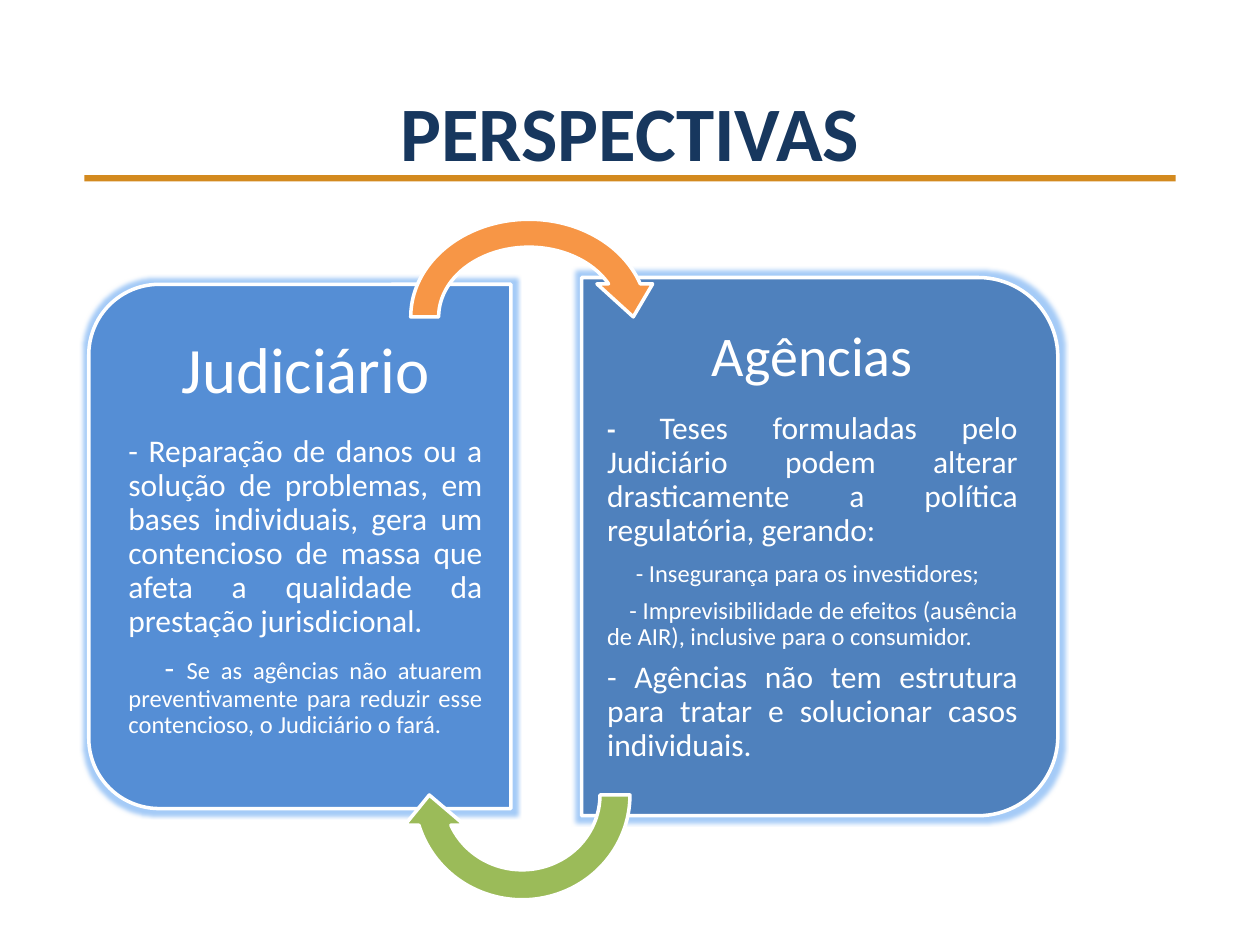
from lxml import etree
from pptx import Presentation
from pptx.dml.color import RGBColor
from pptx.enum.shapes import MSO_SHAPE
from pptx.enum.text import MSO_ANCHOR, PP_ALIGN
from pptx.oxml.ns import qn
from pptx.util import Cm, Pt

PANEL = MSO_SHAPE.ROUND_2_SAME_RECTANGLE
ARROW = MSO_SHAPE.CIRCULAR_ARROW
RECT = MSO_SHAPE.RECTANGLE
CENTER, JUSTIFY = PP_ALIGN.CENTER, PP_ALIGN.JUSTIFY
TOP, MIDDLE = MSO_ANCHOR.TOP, MSO_ANCHOR.MIDDLE

FONT = "Calibri"
WHITE, NAVY, GOLD = "FFFFFF", "17375E", "D38A1F"
GLOW = "A5CBF7"
ARC = (0.125, 11.423, 204.577, 108, 0.125)
GAP = 0.42  # space after, as a share of the text size


def color(code):
    return RGBColor.from_string(code)


def lengths(box):
    return [Cm(v) for v in box]


def add_run(para, text, size, shade=WHITE, bold=False):
    run = para.add_run()
    run.text = text
    font = run.font
    font.name, font.size, font.bold = FONT, Pt(size), bold
    font.color.rgb = color(shade)


def add_para(para, *parts, size=18, align=JUSTIFY, indent=0):
    """Each part is a text, or a text with its own size and weight."""
    para.alignment = align
    para.line_spacing = 0.9
    para.space_after = Pt(round(size * GAP, 1))
    if indent:
        para._p.get_or_add_pPr().set("indent", str(Cm(indent)))
    for part in parts:
        text, points, bold = (part, size, False) if isinstance(part, str) else part
        add_run(para, text, points, bold=bold)


def add_form(slide, kind, box, fill, turn=0, adjust=(), line=None):
    form = slide.shapes.add_shape(kind, *lengths(box))
    form.shadow.inherit = False
    form.rotation = turn
    for i, value in enumerate(adjust):
        form.adjustments[i] = value
    form.fill.solid()
    form.fill.fore_color.rgb = color(fill)
    if line:
        form.line.color.rgb = color(line)
        form.line.width = Pt(2)
    else:
        form.line.fill.background()
    return form


def add_glow(form):
    effects = form._element.spPr.find(qn("a:effectLst"))
    glow = etree.SubElement(effects, qn("a:glow"), rad=str(Pt(5)))
    etree.SubElement(glow, qn("a:srgbClr"), val=GLOW)


def add_text(slide, box, insets, paras):
    frame = slide.shapes.add_textbox(*lengths(box)).text_frame
    frame.word_wrap = True
    frame.vertical_anchor = TOP
    (frame.margin_left, frame.margin_top,
     frame.margin_right, frame.margin_bottom) = lengths(insets)
    for i, (parts, style) in enumerate(paras):
        para = frame.add_paragraph() if i else frame.paragraphs[0]
        add_para(para, *parts, **style)


def set_title(slide, text, box):
    title = slide.shapes.title
    title.left, title.top, title.width, title.height = lengths(box)
    frame = title.text_frame
    frame.vertical_anchor = MIDDLE
    frame.paragraphs[0].alignment = CENTER
    add_run(frame.paragraphs[0], text, 44, NAVY, True)


def main():
    deck = Presentation()
    deck.slide_width, deck.slide_height = Cm(25.4), Cm(19.05)
    slide = deck.slides.add_slide(deck.slide_layouts[5])
    set_title(slide, "PERSPECTIVAS", (1.27, 1.32, 22.86, 2.62))

    # Left panel: the courts
    add_glow(add_form(slide, PANEL, (0.76, 6.76, 10.57, 8.51), "558ED5",
                      turn=270, adjust=(0.167, 0), line=WHITE))
    add_text(slide, (2.21, 6.15, 8.1, 9.75), (0.38, 0.66, 0.58, 0.66), [
        (["Judiciário"], dict(size=37, align=CENTER)),
        (["- Reparação de danos ou a solução de problemas, em bases "
          "individuais, gera um contencioso de massa que afeta a qualidade "
          "da prestação jurisdicional."], {}),
        (["- ", ("Se as agências não atuarem preventivamente para reduzir "
                 "esse contencioso, o Judiciário o fará.", 14, False)],
         dict(indent=0.73)),
    ])

    # Right panel: the agencies
    add_glow(add_form(slide, PANEL, (11.1, 6.22, 10.85, 9.6), "4F81BD",
                      turn=90, adjust=(0.167, 0), line=WHITE))
    add_text(slide, (11.73, 6.05, 9.12, 9.91), (0.51, 0.56, 0.33, 0.56), [
        (["Agências"], dict(size=32, align=CENTER)),
        ([("- ", 16, True), "Teses formuladas pelo Judiciário podem alterar "
          "drasticamente a política regulatória, gerando:"], {}),
        (["- Insegurança para os investidores;"], dict(size=14, indent=0.58)),
        (["- Imprevisibilidade de efeitos (ausência de AIR), inclusive para "
          "o consumidor."], dict(size=14, indent=0.45)),
        (["- Agências não tem estrutura para tratar e solucionar casos "
          "individuais."], {}),
    ])

    # Arrows of the cycle
    add_form(slide, ARROW, (8, 4.14, 5.33, 4.5), "F79646",
             adjust=ARC, line=WHITE)
    add_form(slide, ARROW, (8.05, 13.61, 4.95, 4.83), "9BBB59",
             turn=180, adjust=ARC, line=WHITE)

    # Rule below the title
    add_form(slide, RECT, (1.7, 3.53, 22, 0.13), GOLD)
    deck.save("out.pptx")


if __name__ == "__main__":
    main()
